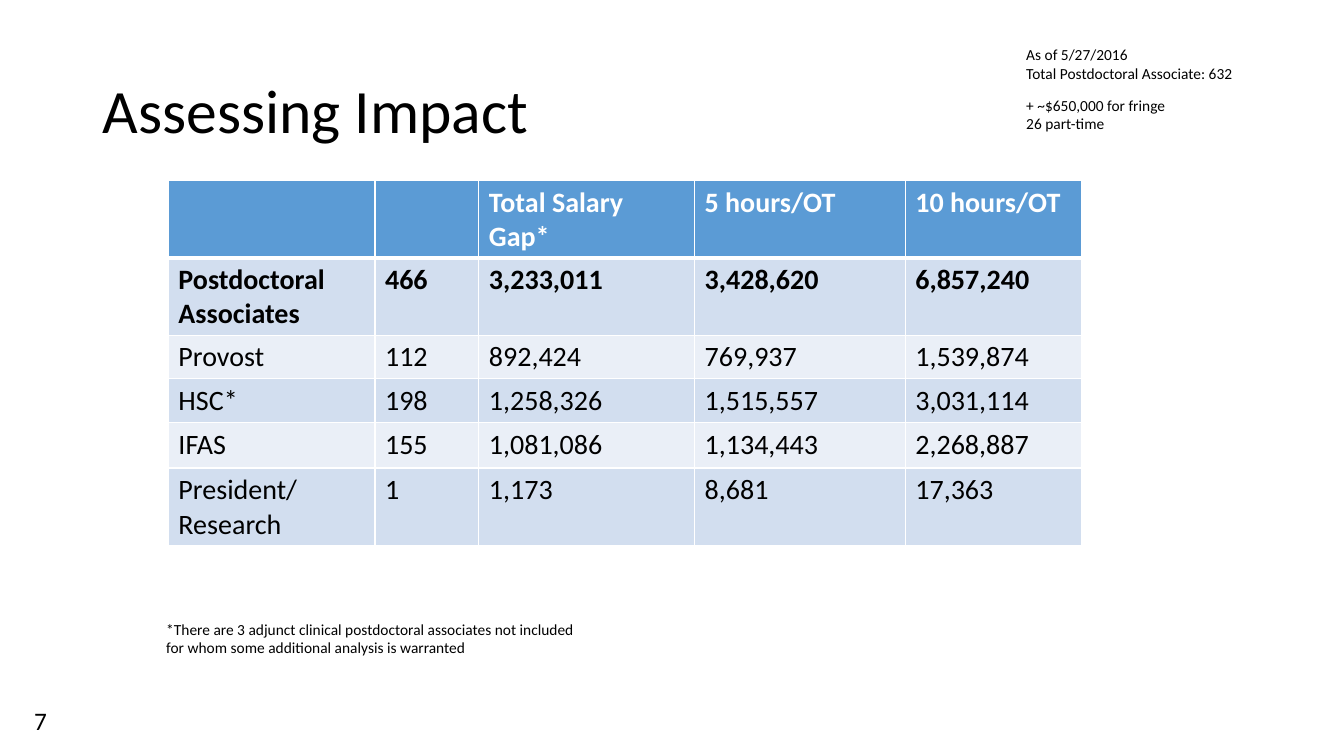
from lxml import etree
from pptx import Presentation
from pptx.dml.color import RGBColor
from pptx.enum.text import MSO_ANCHOR, MSO_AUTO_SIZE, PP_ALIGN
from pptx.oxml.ns import qn
from pptx.util import Inches, Pt

LEFT = PP_ALIGN.LEFT
MIDDLE = MSO_ANCHOR.MIDDLE
NO_FIT = MSO_AUTO_SIZE.NONE
GROW = MSO_AUTO_SIZE.SHAPE_TO_FIT_TEXT

BLACK, WHITE = "000000", "FFFFFF"
HEADER_FILL = "5B9BD5"
BAND_FILLS = ("EAEFF7", "D2DEEF")

COLUMN_WIDTHS = (2.05, 1.03, 2.14, 2.09, 1.75)
ROW_HEIGHTS = (0.41, 0.41, 0.41, 0.41, 0.45, 0.41)
IMPACT_ROWS = (
    ("", "", "Total Salary Gap*", "5 hours/OT", "10 hours/OT"),
    ("Postdoctoral Associates", "466", "3,233,011", "3,428,620", "6,857,240"),
    ("Provost", "112", "892,424", "769,937", "1,539,874"),
    ("HSC*", "198", "1,258,326", "1,515,557", "3,031,114"),
    ("IFAS", "155", "1,081,086", "1,134,443", "2,268,887"),
    ("President/\nResearch", "1", "1,173", "8,681", "17,363"),
)


def color(value):
    return RGBColor.from_string(value)


class SlideBuilder:
    font_name = "Calibri"

    def __init__(self, slide):
        self.slide = slide

    def format_runs(self, text_frame, size, hex_color=BLACK, bold=False):
        for paragraph in text_frame.paragraphs:
            paragraph.alignment = LEFT
            for run in paragraph.runs:
                run.font.name = self.font_name
                run.font.size = Pt(size)
                run.font.bold = bold
                run.font.color.rgb = color(hex_color)

    def title(self, text, left, top, width, height):
        shape = self.slide.shapes.title
        shape.left, shape.top = Inches(left), Inches(top)
        shape.width, shape.height = Inches(width), Inches(height)
        text_frame = shape.text_frame
        text_frame.text = text
        text_frame.word_wrap = True
        text_frame.auto_size = NO_FIT
        text_frame.vertical_anchor = MIDDLE
        text_frame.paragraphs[0].line_spacing = 0.9
        self.format_runs(text_frame, 44)

    def text(self, text, left, top, width, height, size=11):
        shape = self.slide.shapes.add_textbox(
            Inches(left), Inches(top), Inches(width), Inches(height))
        text_frame = shape.text_frame
        text_frame.text = text
        text_frame.word_wrap = True
        text_frame.auto_size = GROW
        self.format_runs(text_frame, size)

    def border(self, cell, side, width):
        properties = cell._tc.get_or_add_tcPr()
        line = etree.SubElement(properties, qn(f"a:ln{side}"), w=str(Pt(width)))
        fill = etree.SubElement(line, qn("a:solidFill"))
        etree.SubElement(fill, qn("a:srgbClr"), val=WHITE)

    def table(self, rows, left, top, column_widths, row_heights):
        table = self.slide.shapes.add_table(
            len(rows), len(column_widths), Inches(left), Inches(top),
            Inches(sum(column_widths)), Inches(sum(row_heights))).table
        for column, width in zip(table.columns, column_widths):
            column.width = Inches(width)
        for row, height in zip(table.rows, row_heights):
            row.height = Inches(height)
        for row_index, values in enumerate(rows):
            header = row_index == 0
            fill = HEADER_FILL if header else BAND_FILLS[row_index % 2]
            for column_index, value in enumerate(values):
                cell = table.cell(row_index, column_index)
                cell.text_frame.paragraphs[0].text = value
                self.format_runs(cell.text_frame, 20,
                                 WHITE if header else BLACK, row_index < 2)
                for side in "LRTB":
                    thick = (header and side == "B") or (row_index == 1 and side == "T")
                    self.border(cell, side, 3 if thick else 1)
                cell.fill.solid()
                cell.fill.fore_color.rgb = color(fill)


def main():
    presentation = Presentation()
    presentation.slide_width = Inches(13.33)
    presentation.slide_height = Inches(7.5)
    builder = SlideBuilder(
        presentation.slides.add_slide(presentation.slide_layouts[5]))
    builder.text("7", 0.24, 6.95, 0.51, 0.4, size=18)
    builder.title("Assessing Impact", 0.92, 0.4, 11.5, 1.45)
    builder.table(IMPACT_ROWS, 1.67, 1.79, COLUMN_WIDTHS, ROW_HEIGHTS)
    builder.text("As of 5/27/2016\nTotal Postdoctoral Associate: 632",
                 10.08, 0.4, 2.33, 0.47)
    builder.text("+ ~$650,000 for fringe\n26 part-time", 10.08, 0.9, 2.92, 0.47)
    builder.text("*There are 3 adjunct clinical postdoctoral associates not included "
                 "for whom some additional analysis is warranted",
                 1.55, 6.1, 4.31, 0.47)
    presentation.save("out.pptx")


if __name__ == "__main__":
    main()
